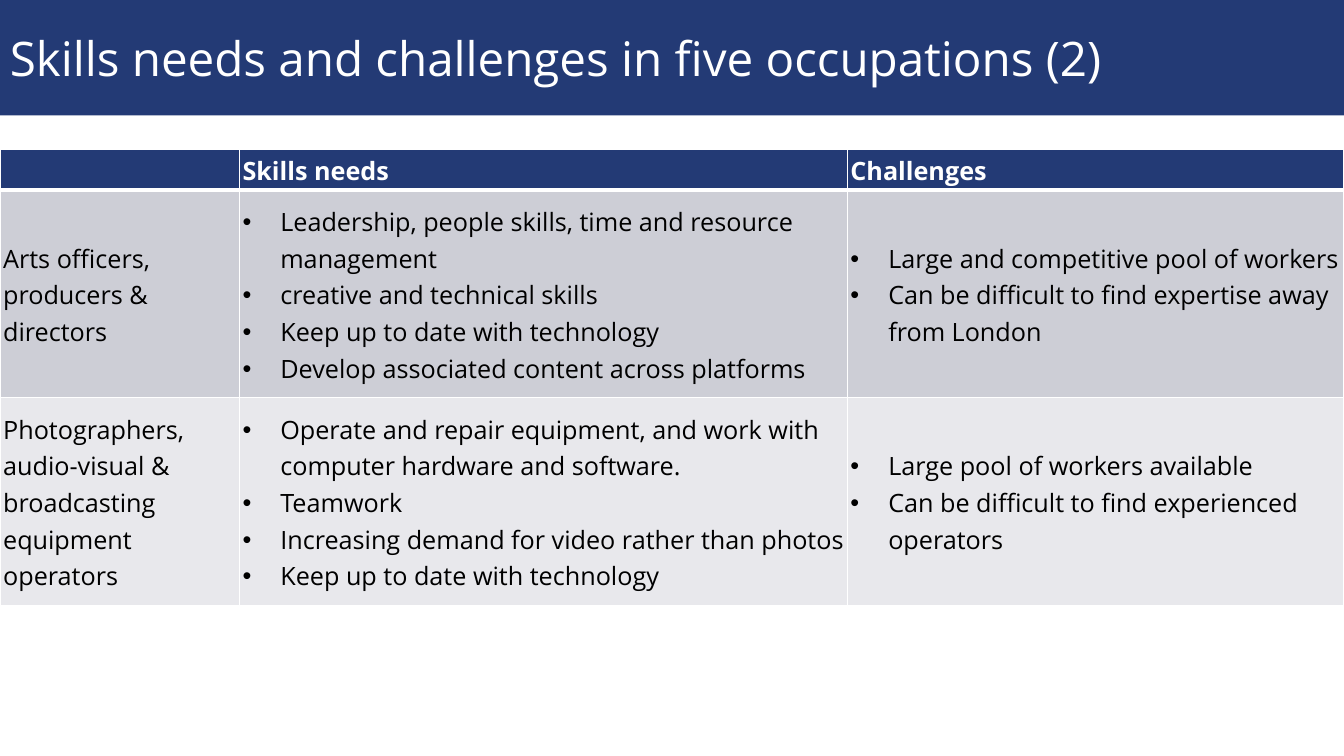
from dataclasses import dataclass

from lxml.etree import SubElement
from pptx import Presentation
from pptx.dml.color import RGBColor
from pptx.enum.shapes import MSO_SHAPE
from pptx.enum.text import MSO_ANCHOR, PP_ALIGN
from pptx.oxml.ns import qn
from pptx.slide import Slide
from pptx.table import Table, _Cell
from pptx.text.text import TextFrame
from pptx.util import Pt

FONT = "Open Sans"
NAVY = "233A75"
WHITE = "FFFFFF"
BLACK = "000000"
COLUMN_WIDTHS = (228, 579, 473)
ROW_HEIGHTS = (35, 198, 198)


@dataclass(frozen=True)
class Occupation:
    title: str
    skills: tuple[str, ...]
    challenges: tuple[str, ...]
    fill: str


OCCUPATIONS = (
    Occupation(
        "Arts officers, producers & directors",
        (
            "Leadership, people skills, time and resource management",
            "creative and technical skills",
            "Keep up to date with technology",
            "Develop associated content across platforms",
        ),
        (
            "Large and competitive pool of workers",
            "Can be difficult to find expertise away from London",
        ),
        "CDCED6",
    ),
    Occupation(
        "Photographers, audio-visual & broadcasting equipment operators",
        (
            "Operate and repair equipment, and work with computer hardware and software.",
            "Teamwork",
            "Increasing demand for video rather than photos",
            "Keep up to date with technology",
        ),
        (
            "Large pool of workers available",
            "Can be difficult to find experienced operators",
        ),
        "E8E8EC",
    ),
)


def px(length: int) -> int:
    return length * 9525


def color(value: str) -> RGBColor:
    return RGBColor.from_string(value)


def write_text(
    frame: TextFrame,
    lines: tuple[str, ...],
    *,
    size: int = 18,
    fill: str = BLACK,
    bold: bool = False,
    spacing: float = 1.07,
    after: int = 0,
    bullets: bool = False,
) -> None:
    frame.word_wrap = True
    for index, line in enumerate(lines):
        para = frame.add_paragraph() if index else frame.paragraphs[0]
        para.alignment = PP_ALIGN.LEFT
        para.line_spacing = spacing
        para.space_after = Pt(after)
        para.font.size = Pt(size)
        if bullets:
            properties = para._p.get_or_add_pPr()
            properties.set("marL", str(px(36)))
            properties.set("indent", str(px(-36)))
            SubElement(properties, qn("a:buFont"), typeface="Arial")
            SubElement(properties, qn("a:buChar"), char="•")
        span = para.add_run()
        span.text = line
        span.font.name = FONT
        span.font.size = Pt(size)
        span.font.bold = bold
        span.font.color.rgb = color(fill)


def style_cell(cell: _Cell, fill: str, top: int, bottom: int) -> None:
    cell.vertical_anchor = MSO_ANCHOR.MIDDLE
    cell.margin_left = cell.margin_right = px(3)
    cell.margin_top = cell.margin_bottom = px(2)
    properties = cell._tc.get_or_add_tcPr()
    for side, width in (("L", 1), ("R", 1), ("T", top), ("B", bottom)):
        line = SubElement(properties, qn(f"a:ln{side}"), w=str(Pt(width)))
        solid = SubElement(line, qn("a:solidFill"))
        SubElement(solid, qn("a:srgbClr"), val=WHITE)
    cell.fill.solid()
    cell.fill.fore_color.rgb = color(fill)


def add_title(page: Slide, text: str) -> None:
    box = page.shapes.add_shape(MSO_SHAPE.RECTANGLE, 0, 0, px(1280), px(110))
    box.shadow.inherit = False
    box.fill.solid()
    box.fill.fore_color.rgb = color(NAVY)
    box.line.fill.background()
    box.text_frame.vertical_anchor = MSO_ANCHOR.MIDDLE
    write_text(box.text_frame, (text,), size=34, fill=WHITE, spacing=1.0)


def add_grid(page: Slide) -> Table:
    frame = page.shapes.add_table(
        len(ROW_HEIGHTS), len(COLUMN_WIDTHS),
        0, px(142), px(sum(COLUMN_WIDTHS)), px(sum(ROW_HEIGHTS)),
    )
    table = frame.table
    table.horz_banding = False
    for column, width in zip(table.columns, COLUMN_WIDTHS):
        column.width = px(width)
    for row, height in zip(table.rows, ROW_HEIGHTS):
        row.height = px(height)
    fills = (NAVY, *(occupation.fill for occupation in OCCUPATIONS))
    for index, (row, fill) in enumerate(zip(table.rows, fills)):
        for cell in row.cells:
            style_cell(cell, fill, 3 if index == 1 else 1, 3 if index == 0 else 1)
    return table


def fill_grid(table: Table) -> None:
    for column, heading in enumerate(("Skills needs", "Challenges"), start=1):
        write_text(table.cell(0, column).text_frame, (heading,),
                   fill=WHITE, bold=True, after=8)
    for row, occupation in enumerate(OCCUPATIONS, start=1):
        write_text(table.cell(row, 0).text_frame, (occupation.title,), after=8)
        for column, lines in enumerate((occupation.skills, occupation.challenges), start=1):
            write_text(table.cell(row, column).text_frame, lines, bullets=True)


def main() -> None:
    deck = Presentation()
    deck.slide_width = px(1280)
    deck.slide_height = px(720)
    page = deck.slides.add_slide(deck.slide_layouts[6])
    add_title(page, "Skills needs and challenges in five occupations (2)")
    fill_grid(add_grid(page))
    deck.save("out.pptx")


if __name__ == "__main__":
    main()
